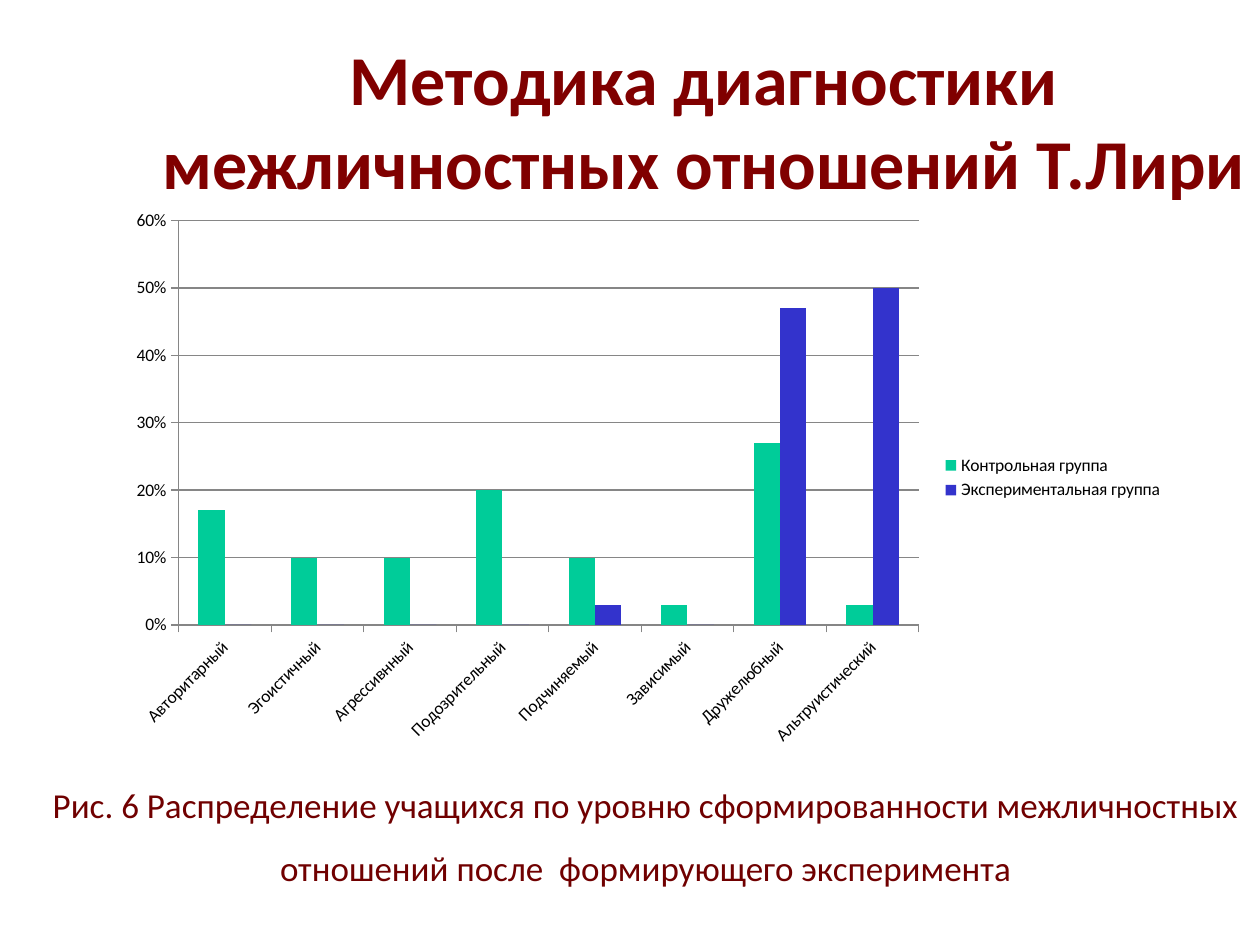
"""Build the slide with the chart of interpersonal relations by group."""
from pptx import Presentation
from pptx.chart.data import CategoryChartData
from pptx.dml.color import RGBColor
from pptx.enum.chart import XL_CHART_TYPE as CT, XL_LEGEND_POSITION as LP, XL_TICK_MARK as TM
from pptx.enum.text import MSO_ANCHOR as MA, PP_ALIGN as PA
from pptx.oxml.ns import qn
from pptx.util import Pt


def rgb(value):
    return RGBColor.from_string(value)


def add_text(s, box, text, size, color, anchor, bold=False):
    tf = s.shapes.add_textbox(*map(Pt, box)).text_frame
    tf.word_wrap = True
    tf.vertical_anchor = anchor
    p = tf.paragraphs[0]
    p.alignment = PA.CENTER
    r = p.add_run()
    r.text = text
    r.font.name = "Calibri"
    r.font.size = Pt(size)
    r.font.bold = bold
    r.font.color.rgb = rgb(color)
    return p


prs = Presentation()
prs.slide_width, prs.slide_height = Pt(720), Pt(540)
s = prs.slides.add_slide(prs.slide_layouts[6])

add_text(s, (84, -24, 636, 144), "Методика диагностики межличностных отношений Т.Лири",
         40, "800000", MA.BOTTOM, True)
p = add_text(s, (18, 432, 702, 84),
             "Рис. 6 Распределение учащихся по уровню сформированности межличностных "
             "отношений после  формирующего эксперимента", 20, "700000", MA.TOP)
p.line_spacing = 1.5
p.space_after = Pt(10)

data = CategoryChartData(number_format="0%")
data.categories = ["Авторитарный", "Эгоистичный", "Агрессивнный", "Подозрительный",
                   "Подчиняемый", "Зависимый", "Дружелюбный", "Альтруистический"]
data.add_series("Контрольная группа", [0.17, 0.1, 0.1, 0.2, 0.1, 0.03, 0.27, 0.03])
data.add_series("Экспериментальная группа", [0, 0, 0, 0, 0.03, 0, 0.47, 0.5])
chart = s.shapes.add_chart(CT.COLUMN_CLUSTERED, Pt(66), Pt(114), Pt(606), Pt(318), data).chart
chart.has_title = False
chart.font.name = "Calibri"
chart.font.size = Pt(10)
chart.font.color.rgb = rgb("000000")
chart.has_legend = True
chart.legend.position = LP.RIGHT
chart.legend.include_in_layout = False

plot = chart.plots[0]
plot.gap_width = 150
plot.overlap = 0
plot.vary_by_categories = False
for series, color in zip(plot.series, ("00CC99", "3333CC")):
    series.format.fill.solid()
    series.format.fill.fore_color.rgb = rgb(color)
    series.invert_if_negative = False

cat, val = chart.category_axis, chart.value_axis
val.minimum_scale, val.maximum_scale, val.major_unit = 0, 0.6, 0.1
val.has_major_gridlines = True
val.tick_labels.number_format = "0%"
val.tick_labels.number_format_is_linked = False
for axis in (cat, val):
    axis.major_tick_mark = TM.OUTSIDE
    axis.tick_labels.font.size = Pt(10)
for line in (cat.format.line, val.format.line, val.major_gridlines.format.line):
    line.color.rgb = rgb("868686")
cat._element.find(qn("c:txPr")).find(qn("a:bodyPr")).set("rot", "-2700000")

prs.save("out.pptx")
